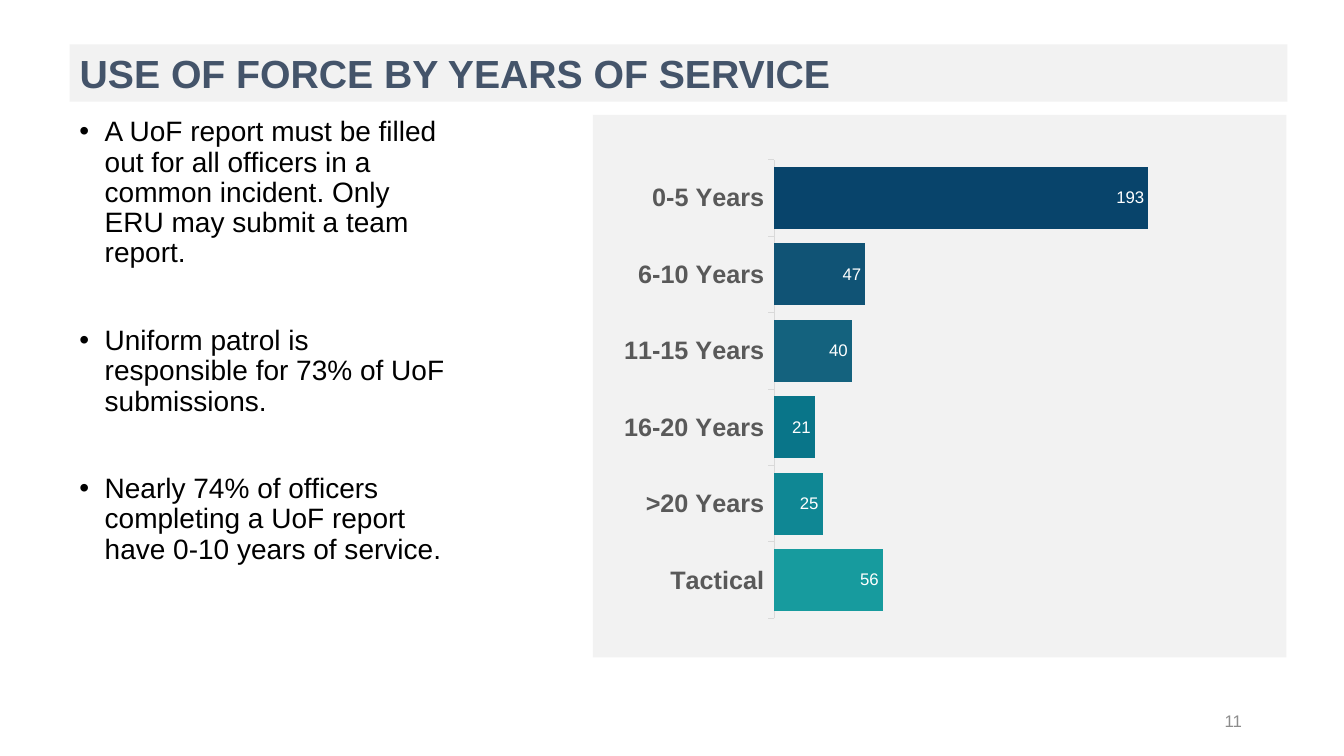
from lxml import etree
from pptx import Presentation
from pptx.chart.data import CategoryChartData
from pptx.dml.color import RGBColor
from pptx.enum.chart import XL_CHART_TYPE as ChartType
from pptx.enum.chart import XL_LABEL_POSITION as LabelPosition
from pptx.enum.chart import XL_TICK_LABEL_POSITION as TickLabelPosition
from pptx.enum.chart import XL_TICK_MARK as TickMark
from pptx.enum.shapes import MSO_SHAPE as Shape
from pptx.enum.text import MSO_ANCHOR as Anchor
from pptx.enum.text import MSO_AUTO_SIZE as AutoSize
from pptx.enum.text import PP_ALIGN as Align
from pptx.oxml.ns import qn
from pptx.util import Pt

FONT = "Arial"
PANEL = "F2F2F2"
BULLETS = [
    "A UoF report must be filled out for all officers in a common incident. "
    "Only ERU may submit a team report.",
    "Uniform patrol is responsible for 73% of UoF submissions.",
    "Nearly 74% of officers completing a UoF report have 0-10 years of service.",
]
# Category, reports, bar colour, from the bottom bar upwards
SERVICE_YEARS = [
    ("Tactical", 56, "179B9E"),
    (">20 Years", 25, "0F8794"),
    ("16-20 Years", 21, "097589"),
    ("11-15 Years", 40, "14627E"),
    ("6-10 Years", 47, "105375"),
    ("0-5 Years", 193, "08446B"),
]


def rgb(color):
    return RGBColor.from_string(color)


def fill_solid(item, color):
    item.fill.solid()
    item.fill.fore_color.rgb = rgb(color)


def format_font(font, size, color, bold=False):
    font.name = FONT
    font.size = Pt(size)
    font.bold = bold
    font.color.rgb = rgb(color)


def write_text(paragraph, text, size=20, color="000000", bold=False,
               align=Align.LEFT):
    run = paragraph.add_run()
    run.text = text
    format_font(run.font, size, color, bold)
    paragraph.alignment = align


def add_bullet(paragraph, indent=18):
    properties = paragraph._p.get_or_add_pPr()
    properties.set("marL", str(Pt(indent)))
    properties.set("indent", str(Pt(-indent)))
    etree.SubElement(properties, qn("a:buFont")).set("typeface", FONT)
    etree.SubElement(properties, qn("a:buChar")).set("char", "•")


def set_title(slide, text, left, top, width, height):
    title = slide.shapes.title
    title.left, title.top = Pt(left), Pt(top)
    title.width, title.height = Pt(width), Pt(height)
    fill_solid(title, PANEL)
    frame = title.text_frame
    frame.auto_size = AutoSize.NONE
    frame.vertical_anchor = Anchor.MIDDLE
    write_text(frame.paragraphs[0], text, size=28, color="44546A", bold=True)


def add_panel(slide, left, top, width, height):
    panel = slide.shapes.add_shape(
        Shape.RECTANGLE, Pt(left), Pt(top), Pt(width), Pt(height))
    panel.shadow.inherit = False
    fill_solid(panel, PANEL)
    panel.line.fill.background()


def add_text_frame(slide, left, top, width, height, anchor=Anchor.TOP):
    box = slide.shapes.add_textbox(Pt(left), Pt(top), Pt(width), Pt(height))
    frame = box.text_frame
    frame.word_wrap = True
    frame.vertical_anchor = anchor
    return frame


def add_bullets(slide, texts, left, top, width, height):
    frame = add_text_frame(slide, left, top, width, height)
    for index, text in enumerate(texts):
        paragraph = frame.add_paragraph() if index else frame.paragraphs[0]
        write_text(paragraph, text)
        paragraph.line_spacing = 0.9
        paragraph.space_before = Pt(41 if index else 0)
        add_bullet(paragraph)


def add_bar_chart(slide, rows, left, top, width, height):
    data = CategoryChartData()
    data.categories = [category for category, _, _ in rows]
    data.add_series("Series 1", [value for _, value, _ in rows])
    chart = slide.shapes.add_chart(
        ChartType.BAR_CLUSTERED, Pt(left), Pt(top), Pt(width), Pt(height),
        data).chart
    chart.has_legend = False
    chart.has_title = False
    format_font(chart.font, 10, "000000")

    category_axis = chart.category_axis
    category_axis.major_tick_mark = TickMark.OUTSIDE
    category_axis.tick_label_position = TickLabelPosition.NEXT_TO_AXIS
    category_axis.format.line.color.rgb = rgb("D9D9D9")
    category_axis.format.line.width = Pt(0.75)
    format_font(category_axis.tick_labels.font, 18, "595959", bold=True)

    value_axis = chart.value_axis
    value_axis.visible = False
    value_axis.has_major_gridlines = False
    value_axis.minimum_scale, value_axis.maximum_scale = 0, 250

    plot = chart.plots[0]
    plot.vary_by_categories = False
    plot.gap_width = 23
    plot.overlap = 12
    series = plot.series[0]
    fill_solid(series.format, "4472C4")
    for index, (_, _, color) in enumerate(rows):
        fill_solid(series.points[index].format, color)
    labels = series.data_labels
    labels.show_value = True
    labels.position = LabelPosition.INSIDE_END
    format_font(labels.font, 12, "FFFFFF")


def main():
    presentation = Presentation()
    presentation.slide_width, presentation.slide_height = Pt(960), Pt(540)
    slide = presentation.slides.add_slide(presentation.slide_layouts[5])
    set_title(slide, "USE OF FORCE BY YEARS OF SERVICE", 49.7, 31.7, 869.8, 41)
    add_panel(slide, 423.4, 82.1, 495.4, 387.4)
    add_bullets(slide, BULLETS, 49.7, 80.6, 277.2, 416.2)
    add_bar_chart(slide, SERVICE_YEARS, 436.3, 107.3, 472.3, 341.3)
    page_number = add_text_frame(slide, 678.2, 500.4, 216, 28.8, Anchor.MIDDLE)
    write_text(page_number.paragraphs[0], "11", size=12, color="8C8C8C",
               align=Align.RIGHT)
    presentation.save("out.pptx")


if __name__ == "__main__":
    main()
